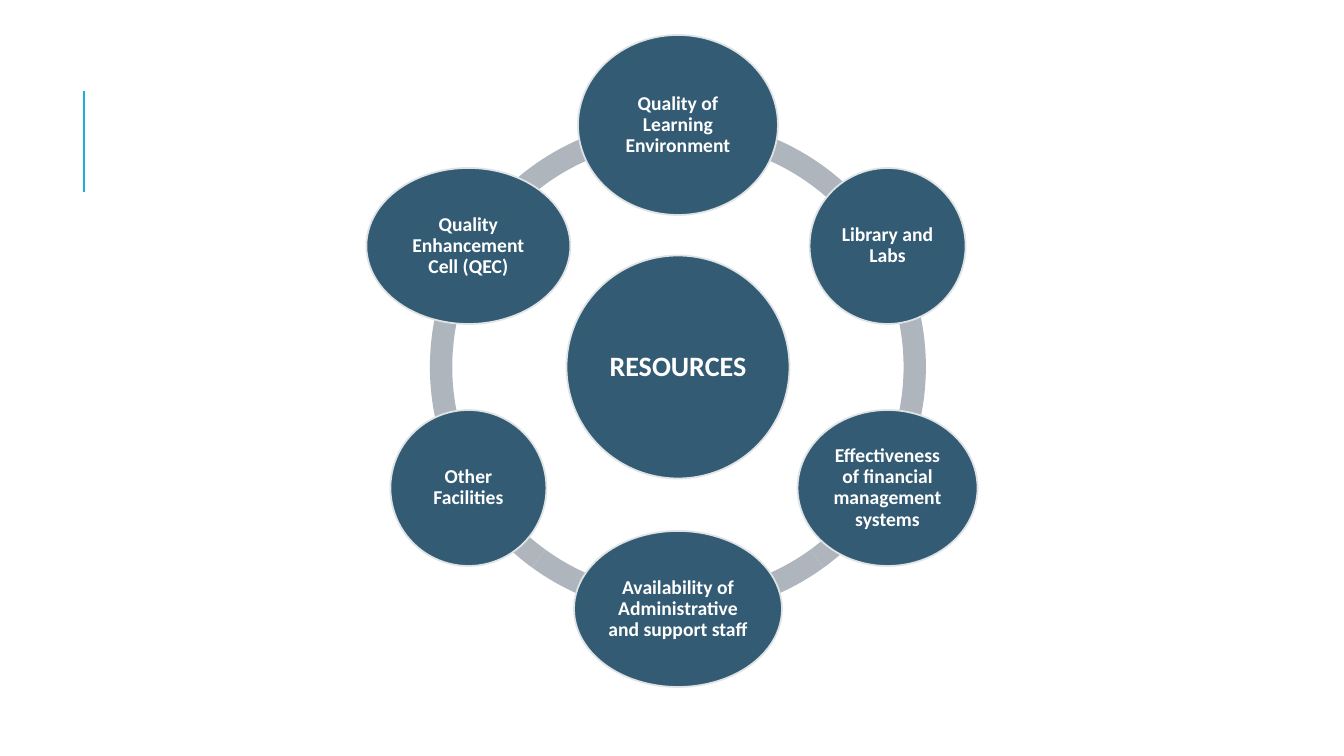
from dataclasses import dataclass
from math import cos, radians, sin

from pptx import Presentation
from pptx import util as u
from pptx.dml.color import RGBColor
from pptx.enum import shapes, text
from lxml import etree

A = "http://schemas.openxmlformats.org/drawingml/2006/main"


@dataclass(frozen=True)
class Theme:
    """Colours, font and type sizes of the slide."""
    accent: str = "1CADE4"
    node: str = "335B74"
    edge: str = "DFE3E5"
    ring: str = "AEB5BC"
    ink: str = "FFFFFF"
    font: str = "Calibri"
    hub_size: int = 20
    node_size: int = 14


THEME = Theme()
HUB = "RESOURCES"
NODES = [
    ("Quality of Learning Environment", 200, 180),
    ("Library and Labs", 156, 156),
    ("Effectiveness of financial management systems", 180, 156),
    ("Availability of Administrative and support staff", 208, 156),
    ("Other Facilities", 156, 156),
    ("Quality Enhancement Cell (QEC)", 204, 156),
]


def px(n):
    """Turn pixels into EMU."""
    return u.Emu(round(n * 914400 / 100.8))


def rgb(code):
    """Turn a hex code into a colour."""
    return RGBColor.from_string(code)


def add_filled(s, kind, cx, cy, w, h, fill, edge=None):
    """Add a filled shape centred on a point, outlined if an edge is given."""
    sp = s.shapes.add_shape(kind, px(cx - w / 2), px(cy - h / 2), px(w), px(h))
    sp.shadow.inherit = False
    sp.fill.solid()
    sp.fill.fore_color.rgb = rgb(fill)
    if edge:
        sp.line.color.rgb = rgb(edge)
        sp.line.width = u.Pt(1.25)
    else:
        sp.line.fill.background()
    return sp


def write(sp, words, size, color=THEME.ink, bold=True, inset=2):
    """Write centred text into a shape."""
    tf = sp.text_frame
    tf.word_wrap = True
    tf.vertical_anchor = text.MSO_ANCHOR.MIDDLE
    tf.margin_left = tf.margin_right = tf.margin_top = tf.margin_bottom = px(inset)
    p = tf.paragraphs[0]
    p.alignment = text.PP_ALIGN.CENTER
    p.line_spacing = 0.9
    r = p.add_run()
    r.text = words
    r.font.name = THEME.font
    r.font.size = u.Pt(size)
    r.font.bold = bold
    r.font.color.rgb = rgb(color)


def add_title_rule(s, x, y, h):
    """Draw the vertical accent line beside the title area."""
    line = s.shapes.add_connector(shapes.MSO_CONNECTOR.STRAIGHT, px(x), px(y + h), px(x), px(y))
    line.line.color.rgb = rgb(THEME.accent)
    line.line.width = u.Pt(1.5)
    etree.SubElement(line._element.spPr, f"{{{A}}}effectLst")


def add_ring(s, cx, cy, d):
    """Draw the ring as arcs that meet end to end."""
    starts = range(18, 199, 36)
    for i, start in enumerate(starts):
        arc = add_filled(s, shapes.MSO_SHAPE.BLOCK_ARC, cx, cy, d, d, THEME.ring)
        arc.adjustments[0] = start * 0.6
        arc.adjustments[1] = starts[(i + 1) % len(starts)] * 0.6
        arc.adjustments[2] = 0.045


def add_node(s, cx, cy, w, h, words, size, inset=2):
    """Draw one labelled ellipse."""
    sp = add_filled(s, shapes.MSO_SHAPE.OVAL, cx, cy, w, h, THEME.node, THEME.edge)
    write(sp, words, size, inset=inset)


def add_radial_cycle(s, x, y, d):
    """Draw the ring, its hub and the nodes spaced evenly round it."""
    cx, cy = x + d / 2, y + d / 2
    orbit = d / 2 - 6
    add_ring(s, cx, cy, d)
    add_node(s, cx, cy, 223, 223, HUB, THEME.hub_size, inset=3)
    for i, (words, w, h) in enumerate(NODES):
        angle = radians(i * 360 / len(NODES) - 90)
        add_node(s, cx + orbit * cos(angle), cy + orbit * sin(angle), w, h,
                 words, THEME.node_size)


def main():
    """Build and save the slide."""
    prs = Presentation()
    prs.slide_width, prs.slide_height = px(1344), px(756)
    s = prs.slides.add_slide(prs.slide_layouts[6])
    add_title_rule(s, 84, 91, 101)
    add_radial_cycle(s, 430, 119, 496)
    prs.save("out.pptx")


if __name__ == "__main__":
    main()
